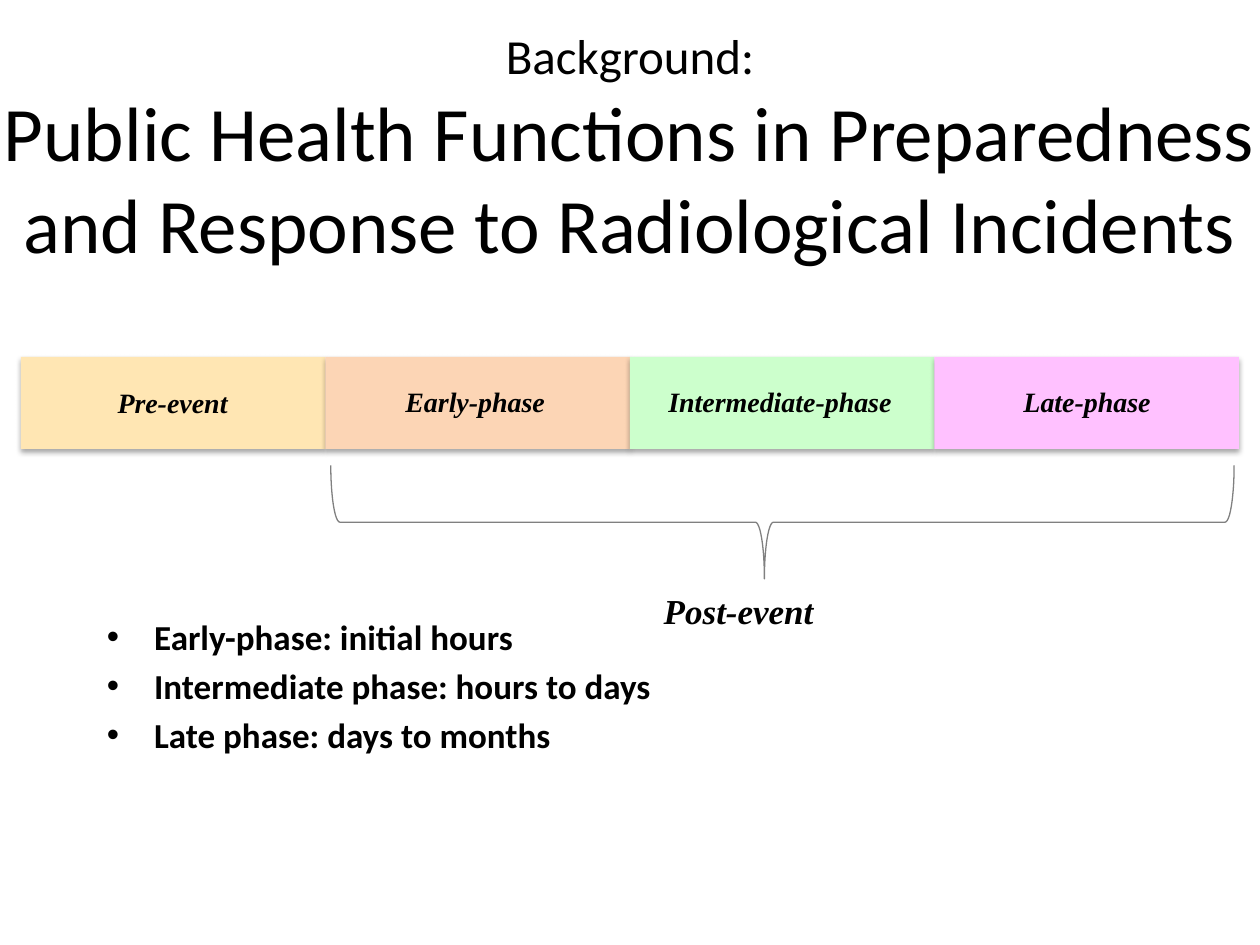
from dataclasses import dataclass

from lxml.etree import SubElement
from pptx import Presentation
from pptx.dml.color import RGBColor
from pptx.enum.shapes import MSO_SHAPE as Shape
from pptx.enum.text import MSO_ANCHOR as Anchor, MSO_AUTO_SIZE as AutoSize, PP_ALIGN as Align
from pptx.oxml.ns import qn
from pptx.util import Pt

BLACK = RGBColor(0x00, 0x00, 0x00)
GRAY = RGBColor(0x80, 0x80, 0x80)
SAND = RGBColor(0xFF, 0xE6, 0xB3)
PEACH = RGBColor(0xFC, 0xD5, 0xB5)
MINT = RGBColor(0xCC, 0xFF, 0xCC)
PINK = RGBColor(0xFF, 0xC1, 0xFF)

SANS = "Calibri"
SERIF = "Times New Roman"
PHASE_LEFT, PHASE_TOP, PHASE_WIDTH, PHASE_HEIGHT = 12, 204, 174, 52.5


@dataclass(frozen=True)
class Phase:
    label: str
    fill: RGBColor
    label_left: float
    label_top: float
    label_width: float


PHASES = [
    Phase("Pre-event", SAND, 18.7, 216.7, 159.8),
    Phase("Early-phase", PEACH, 200.2, 216, 142.6),
    Phase("Intermediate-phase", MINT, 365.8, 216, 159.8),
    Phase(" Late-phase", PINK, 547.9, 216, 142.6),
]

DURATIONS = [
    "Early-phase: initial hours",
    "Intermediate phase: hours to days",
    "Late phase: days to months",
]


def add_run(p, text: str, size: float, font: str, bold: bool = False, italic: bool = False) -> None:
    r = p.add_run()
    r.text = text
    r.font.size = Pt(size)
    r.font.name = font
    r.font.bold = bold
    r.font.italic = italic
    r.font.color.rgb = BLACK


def add_text_frame(s, left: float, top: float, width: float, height: float):
    tf = s.shapes.add_textbox(Pt(left), Pt(top), Pt(width), Pt(height)).text_frame
    tf.word_wrap = True
    return tf


def add_label(s, text: str, left: float, top: float, width: float, height: float,
              size: float, align: Align) -> None:
    tf = add_text_frame(s, left, top, width, height)
    tf.auto_size = AutoSize.SHAPE_TO_FIT_TEXT
    p = tf.paragraphs[0]
    p.alignment = align
    add_run(p, text, size, SERIF, bold=True, italic=True)


def add_shadow(sp) -> None:
    sp.shadow.inherit = False
    effects = sp._element.spPr.find(qn("a:effectLst"))
    shadow = SubElement(effects, qn("a:outerShdw"), blurRad=str(Pt(3.1)), dist=str(Pt(1.8)),
                        dir="5400000", rotWithShape="0")
    color = SubElement(shadow, qn("a:srgbClr"), val=str(BLACK))
    SubElement(color, qn("a:alpha"), val="35000")


def add_phase(s, index: int, phase: Phase) -> None:
    sp = s.shapes.add_shape(Shape.RECTANGLE, Pt(PHASE_LEFT + index * PHASE_WIDTH), Pt(PHASE_TOP),
                            Pt(PHASE_WIDTH), Pt(PHASE_HEIGHT))
    sp.fill.solid()
    sp.fill.fore_color.rgb = phase.fill
    sp.line.fill.background()
    add_shadow(sp)
    add_label(s, phase.label, phase.label_left, phase.label_top, phase.label_width, 27,
              16, Align.CENTER)


def add_brace(s) -> None:
    sp = s.shapes.add_shape(Shape.RIGHT_BRACE, Pt(414.7), Pt(40.3), Pt(64.8), Pt(516.2))
    sp.rotation = 90
    sp.adjustments[0] = 0.08
    sp.adjustments[1] = 0.52
    sp.fill.background()
    sp.line.color.rgb = GRAY
    sp.line.width = Pt(0.75)
    sp.shadow.inherit = False


def set_title(s) -> None:
    sp = s.shapes.title
    sp.left, sp.top, sp.width, sp.height = Pt(-15), Pt(0), Pt(750), Pt(168)
    tf = sp.text_frame
    tf.word_wrap = True
    tf.auto_size = AutoSize.NONE
    tf.vertical_anchor = Anchor.MIDDLE
    p = tf.paragraphs[0]
    p.alignment = Align.CENTER
    add_run(p, "Background:", 28, SANS)
    p.add_line_break()
    add_run(p, "Public Health Functions in Preparedness and Response to Radiological Incidents",
            44, SANS)


def add_durations(s) -> None:
    tf = add_text_frame(s, 54, 348, 390, 144)
    for i, text in enumerate(DURATIONS):
        p = tf.paragraphs[0] if i == 0 else tf.add_paragraph()
        p.space_before = Pt(4)
        pPr = p._p.get_or_add_pPr()
        pPr.set("marL", str(Pt(27)))
        pPr.set("indent", str(Pt(-27)))
        SubElement(pPr, qn("a:buFont"), typeface="Arial")
        SubElement(pPr, qn("a:buChar"), char="•")
        add_run(p, text, 20, SANS, bold=True)


def main() -> None:
    prs = Presentation()
    prs.slide_width, prs.slide_height = Pt(720), Pt(540)
    s = prs.slides.add_slide(prs.slide_layouts[5])
    set_title(s)
    add_durations(s)
    for i, phase in enumerate(PHASES):
        add_phase(s, i, phase)
    add_brace(s)
    add_label(s, "Post-event", 372.2, 333.4, 152.6, 32.4, 20, Align.LEFT)
    prs.save("out.pptx")


if __name__ == "__main__":
    main()
